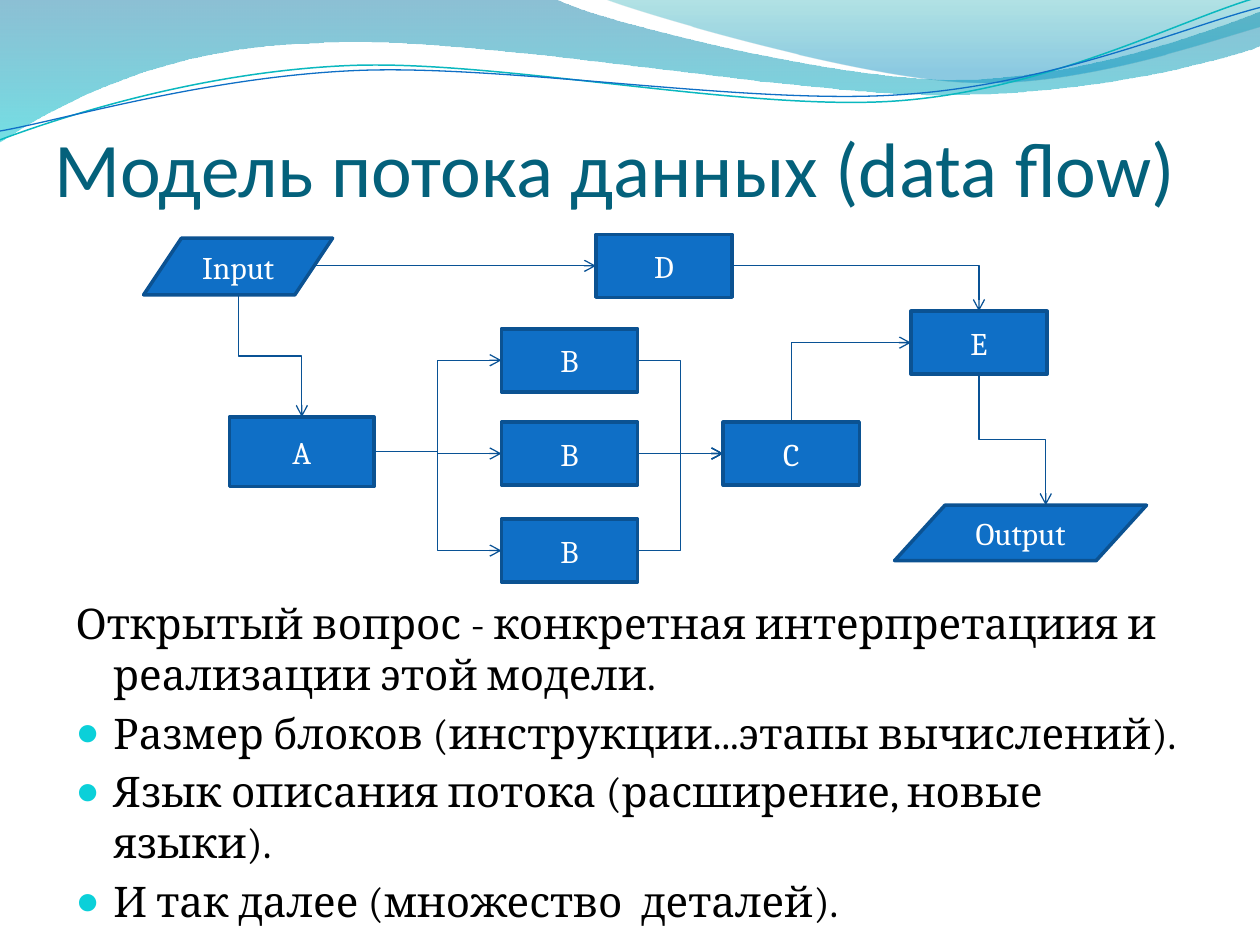
from math import cos, radians, sin

from lxml.etree import SubElement
from pptx import Presentation
from pptx.dml.color import RGBColor
from pptx.enum.shapes import MSO_CONNECTOR, MSO_SHAPE
from pptx.enum.text import MSO_ANCHOR, MSO_AUTO_SIZE, PP_ALIGN
from pptx.oxml.ns import qn
from pptx.util import Inches, Pt

BLUE = RGBColor(0x0F, 0x6F, 0xC6)
BORDER = RGBColor(0x0B, 0x52, 0x92)
ARROW = RGBColor(0x09, 0x52, 0x95)
TEAL = RGBColor(0x0A, 0xB8, 0xBF)
BULLET = RGBColor(0x0B, 0xD0, 0xD9)
TITLE = RGBColor(0x04, 0x61, 0x7B)
SEA = RGBColor(0x00, 0x74, 0xA1)
AQUA = RGBColor(0x00, 0xC6, 0xCF)
LAGOON = RGBColor(0x00, 0xA1, 0xA9)
SKY = RGBColor(0x00, 0x8B, 0xBF)
WHITE = RGBColor(0xFF, 0xFF, 0xFF)
BLACK = RGBColor(0, 0, 0)

TILT = -2.7
BANDS = [
    ([("M", (0, 0)), ("L", (4.4, -0.01)),
      ("C", (4.76, 0.17), (6.64, 0.63), (7.58, 0.63)),
      ("C", (8.53, 0.63), (9.58, 0.26), (10, 0.09)), ("L", (10.01, 0.36)),
      ("C", (9.83, 0.44), (8.7, 0.76), (7.46, 0.75)),
      ("C", (6.22, 0.75), (3.82, 0.28), (2.57, 0.34)),
      ("C", (1.29, 0.36), (0.46, 0.83), (-0.01, 1.13)), ("L", (0, 0))],
     [(0, SEA, 45), (100, AQUA, 55)]),
    ([("M", (4.79, -0.01)),
      ("C", (5.09, 0.11), (6.82, 0.62), (7.69, 0.65)),
      ("C", (8.56, 0.69), (9.61, 0.32), (10, 0.21)),
      ("L", (10, 0)), ("L", (4.79, -0.01))],
     [(0, LAGOON, 30), (80, SKY, 45)]),
]
STRANDS = [
    ([("M", (0, 1.11)),
      ("C", (0.48, 0.93), (1.58, 0.57), (2.77, 0.52)),
      ("C", (3.95, 0.47), (5.93, 0.89), (7.13, 0.8)),
      ("C", (8.33, 0.71), (9.38, 0.15), (9.98, -0.02))], (4.99, 0.58), TEAL, 0.85),
    ([("M", (0, 1.04)),
      ("C", (0.47, 0.96), (1.64, 0.61), (2.83, 0.56)),
      ("C", (4.03, 0.51), (5.97, 0.84), (7.17, 0.75)),
      ("C", (8.36, 0.67), (9.41, 0.21), (10, 0.06))], (5, 0.59), BLUE, 0.75),
]
ITEMS = [
    "Открытый вопрос - конкретная интерпретациия и реализации этой модели.",
    "Размер блоков (инструкции...этапы вычислений).",
    "Язык описания потока (расширение, новые языки).",
    "И так далее (множество  деталей).",
]


def apply(target, values):
    for name, value in values.items():
        setattr(target, name, value)


def add_outline(page, steps, close):
    corners = [(Inches(x), Inches(y)) for _, *points in steps for x, y in points]
    builder = page.shapes.build_freeform(*corners[0])
    builder.add_line_segments(corners[1:], close=close)
    shape = builder.convert_to_shape()
    shape.shadow.inherit = False
    segments = iter(list(shape._element.iter(qn("a:lnTo"))))
    for command, *points in steps[1:]:
        group = [next(segments) for _ in points]
        if command == "C":
            group[0].tag = qn("a:cubicBezTo")
            for segment in group[1:]:
                group[0].append(segment[0])
                segment.getparent().remove(segment)
    return shape


def add_band(page, steps, stops):
    band = add_outline(page, steps, True)
    band.line.fill.background()
    band.fill.gradient()
    gradient = band._element.spPr.find(qn("a:gradFill"))
    for child in list(gradient):
        gradient.remove(child)
    stop_list = SubElement(gradient, qn("a:gsLst"))
    for position, color, opacity in stops:
        stop = SubElement(stop_list, qn("a:gs"), pos=str(position * 1000))
        tone = SubElement(stop, qn("a:srgbClr"), val=str(color))
        SubElement(tone, qn("a:alpha"), val=str(opacity * 1000))
    SubElement(gradient, qn("a:lin"), ang="5400000", scaled="0")


def level(point, center):
    angle = radians(-TILT)
    x, y = point[0] - center[0], point[1] - center[1]
    return (center[0] + x * cos(angle) - y * sin(angle),
            center[1] + x * sin(angle) + y * cos(angle))


def add_strand(page, steps, center, color, width):
    flat = [(command, *(level(point, center) for point in points)) for command, *points in steps]
    strand = add_outline(page, flat, False)
    strand.rotation = TILT
    strand.fill.background()
    strand.line.color.rgb = color
    strand.line.width = Pt(width)


def add_span(para, text, font, size, color):
    span = para.add_run()
    span.text = text
    apply(span.font, {"name": font, "size": Pt(size)})
    span.font.color.rgb = color


def add_block(page, text, left, top, width=1.08, height=0.5, kind=MSO_SHAPE.FLOWCHART_PROCESS):
    block = page.shapes.add_shape(kind, *map(Inches, (left, top, width, height)))
    block.shadow.inherit = False
    block.fill.solid()
    block.fill.fore_color.rgb = BLUE
    block.line.color.rgb = BORDER
    block.line.width = Pt(2)
    block.text_frame.vertical_anchor = MSO_ANCHOR.MIDDLE
    para = block.text_frame.paragraphs[0]
    para.alignment = PP_ALIGN.CENTER
    add_span(para, text, "Cambria", 18, WHITE)
    return block


def side(block, site):
    across, down = [(0.5, 0), (0, 0.5), (0.5, 1), (1, 0.5)][site]
    return block.left + int(block.width * across), block.top + int(block.height * down)


def style_arrow(arrow):
    arrow.line.color.rgb = ARROW
    arrow.line.width = Pt(0.75)
    SubElement(arrow.line._get_or_add_ln(), qn("a:tailEnd"), type="arrow")
    SubElement(arrow._element.spPr, qn("a:effectLst"))


def add_straight(page, start, target, source=None):
    arrow = page.shapes.add_connector(MSO_CONNECTOR.STRAIGHT, *start, *side(target, 1))
    if source is not None:
        arrow.begin_connect(source, 3)
    arrow.end_connect(target, 1)
    style_arrow(arrow)


def add_elbow(page, start, end, vertical=False, single=False):
    (x1, y1), (x2, y2) = start, end
    if vertical:
        x, y, dx, dy = (x1 + x2) // 2, (y1 + y2) // 2, (x2 - x1) // 2, (y2 - y1) // 2
        x1, y1, x2, y2 = x - dy, y + dx, x + dy, y - dx
    arrow = page.shapes.add_connector(MSO_CONNECTOR.ELBOW, x1, y1, x2, y2)
    properties = arrow._element.spPr
    if vertical:
        properties.find(qn("a:xfrm")).set("rot", "5400000")
    if single:
        properties.find(qn("a:prstGeom")).set("prst", "bentConnector2")
    style_arrow(arrow)


def add_flow(page):
    data = MSO_SHAPE.FLOWCHART_DATA
    first = add_block(page, "A", 1.82, 3.31, 1.15, 0.55)
    direct = add_block(page, "D", 4.73, 1.86)
    workers = [add_block(page, "B", 3.98, top) for top in (2.61, 3.35, 4.12)]
    merge = add_block(page, "C", 5.74, 3.35)
    final = add_block(page, "E", 7.23, 2.47)
    source = add_block(page, "Input", 1.14, 1.89, 1.5, 0.45, data)
    result = add_block(page, "Output", 7.1, 4.01, 2, 0.44, data)
    for worker in workers:
        add_elbow(page, side(first, 3), side(worker, 1))
        if worker.top == merge.top:
            add_straight(page, side(worker, 3), merge, worker)
        else:
            add_elbow(page, side(worker, 3), side(merge, 1))
    add_straight(page, (Inches(2.49), side(direct, 1)[1]), direct)
    add_elbow(page, side(direct, 3), side(final, 0), single=True)
    add_elbow(page, side(merge, 0), side(final, 1), vertical=True, single=True)
    add_elbow(page, side(source, 2), side(first, 0), vertical=True)
    add_elbow(page, side(final, 2), (Inches(8.3), result.top), vertical=True)


def place(page, box, left, top, width, height):
    page.shapes._spTree.append(box._element)
    apply(box, {"left": Inches(left), "top": Inches(top),
                "width": Inches(width), "height": Inches(height)})
    apply(box.text_frame, {"word_wrap": True, "auto_size": MSO_AUTO_SIZE.NONE})


def write_title(page):
    box = page.shapes.title
    place(page, box, 0.43, 0.44, 9, 1.25)
    apply(box.text_frame, {"vertical_anchor": MSO_ANCHOR.BOTTOM, "margin_left": 0,
                           "margin_top": Inches(0.05), "margin_right": 0, "margin_bottom": 0})
    para = box.text_frame.paragraphs[0]
    para.alignment = PP_ALIGN.LEFT
    add_span(para, "Модель потока данных (data flow)", "Calibri", 44.1, TITLE)


def write_list(page):
    box = page.placeholders[1]
    place(page, box, 0.5, 4.69, 9, 2.22)
    frame = box.text_frame
    for index, text in enumerate(ITEMS):
        para = frame.add_paragraph() if index else frame.paragraphs[0]
        apply(para, {"space_before": Pt(4.8), "line_spacing": 1.0})
        add_span(para, text, "Cambria", 24.1, BLACK)
        properties = para._p.get_or_add_pPr()
        properties.set("marL", str(Inches(0.3)))
        properties.set("indent", str(-Inches(0.3)))
        if index:
            tint = SubElement(properties, qn("a:buClr"))
            SubElement(tint, qn("a:srgbClr"), val=str(BULLET))
            SubElement(properties, qn("a:buSzPct"), val="95000")
            SubElement(properties, qn("a:buChar"), char="●")
        else:
            SubElement(properties, qn("a:buNone"))


def main():
    deck = Presentation()
    apply(deck, {"slide_width": Inches(10), "slide_height": Inches(7.5)})
    page = deck.slides.add_slide(deck.slide_layouts[1])
    for band in BANDS:
        add_band(page, *band)
    for strand in STRANDS:
        add_strand(page, *strand)
    write_title(page)
    add_flow(page)
    write_list(page)
    deck.save("out.pptx")


if __name__ == "__main__":
    main()
